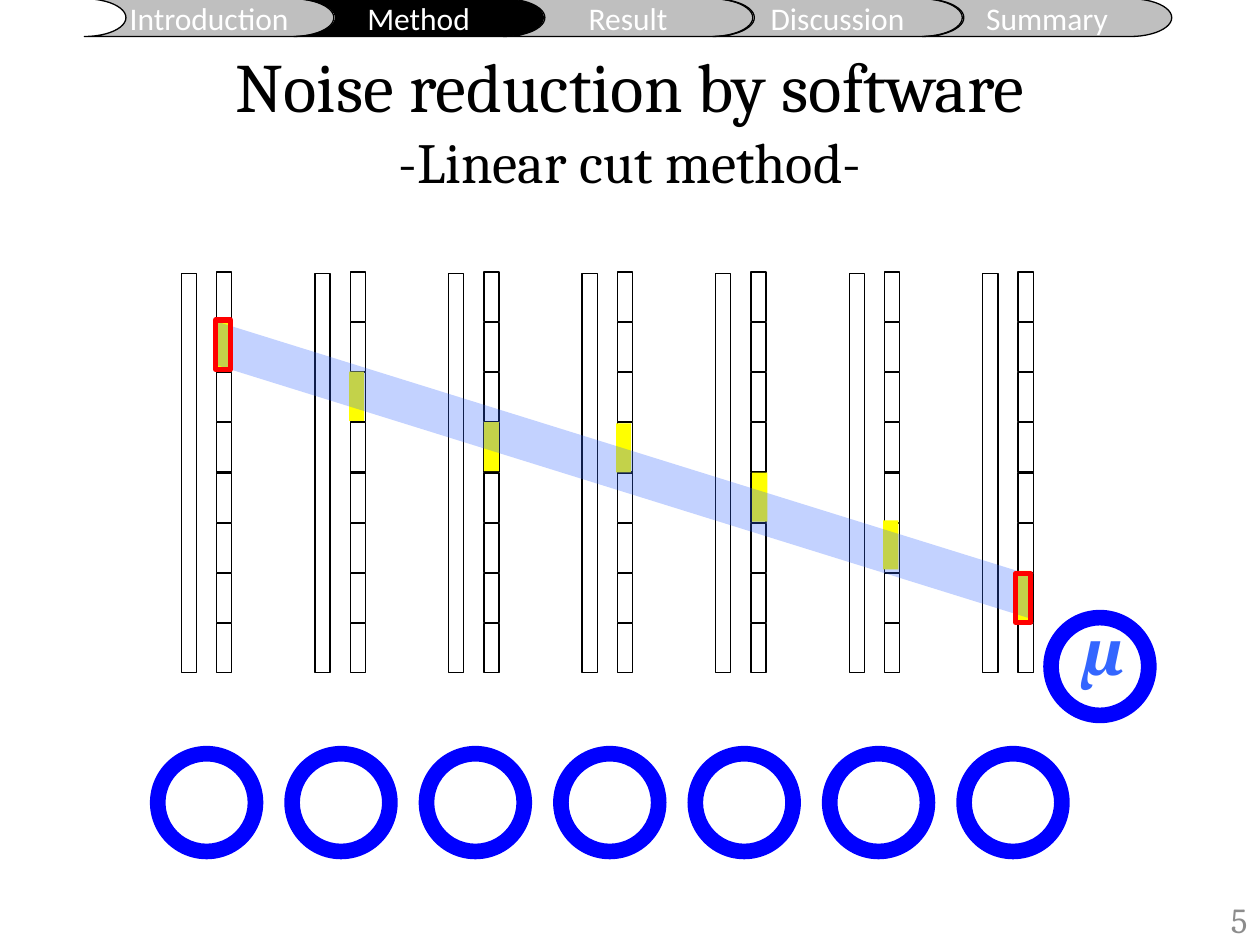
from dataclasses import dataclass
from typing import Optional

from lxml.etree import SubElement
from pptx import Presentation
from pptx.dml.color import RGBColor
from pptx.enum.shapes import MSO_SHAPE
from pptx.enum.text import MSO_ANCHOR, PP_ALIGN
from pptx.oxml.ns import qn
from pptx.util import Inches, Pt

BLACK = RGBColor(0x00, 0x00, 0x00)
WHITE = RGBColor(0xFF, 0xFF, 0xFF)
TAB_GRAY = RGBColor(0xBF, 0xBF, 0xBF)
NUMBER_GRAY = RGBColor(0x8C, 0x8C, 0x8C)
YELLOW = RGBColor(0xFF, 0xFF, 0x00)
RED = RGBColor(0xFF, 0x00, 0x00)
RING_BLUE = RGBColor(0x00, 0x00, 0xFF)
TRACK_BLUE = RGBColor(0x33, 0x66, 0xFF)

TABS = ["Introduction", "Method", "Result", "Discussion", "Summary"]
ACTIVE_TAB = "Method"
LAYER_COUNT = 7
CELL_COUNT = 8
LAYER_PITCH = 1.06
CELL_PITCH = 2.79 / 7
RING_PITCH = 6.4 / 6
CELL_WIDTH, CELL_HEIGHT = 0.12, 0.39
HITS = [(1.72, 2.54), (2.77, 2.95), (3.84, 3.35), (4.89, 3.36),
        (5.97, 3.75), (7.01, 4.13), (8.06, 4.53)]
END_MARKS = [(1.71, 2.54), (8.06, 4.55)]


@dataclass
class Area:
    left: float
    top: float
    width: float
    height: float

    def lengths(self) -> list:
        return [Inches(side) for side in (self.left, self.top, self.width, self.height)]


@dataclass
class Style:
    fill: Optional[RGBColor] = None
    line: Optional[RGBColor] = None
    line_width: float = 0.75
    adjust: Optional[float] = None


@dataclass
class Words:
    text: str
    size: float
    color: RGBColor
    font: str = "Cambria"
    bold: bool = False
    italic: bool = False


OUTLINE = Style(line=BLACK)
HIT = Style(fill=YELLOW)
END_MARK = Style(line=RED, line_width=3)
RING = Style(fill=RING_BLUE, adjust=0.138)
TRACK = Style(fill=TRACK_BLUE, adjust=0.854)


def add_figure(page, kind, area: Area, style: Style):
    figure = page.shapes.add_shape(kind, *area.lengths())
    figure.shadow.inherit = False
    if style.fill is None:
        figure.fill.background()
    else:
        figure.fill.solid()
        figure.fill.fore_color.rgb = style.fill
    if style.line is None:
        figure.line.fill.background()
    else:
        figure.line.color.rgb = style.line
        figure.line.width = Pt(style.line_width)
    if style.adjust is not None:
        figure.adjustments[0] = style.adjust
    return figure


def write_words(box, lines: list[Words], align, frame_format: dict) -> None:
    frame = box.text_frame
    for name, value in frame_format.items():
        setattr(frame, name, value)
    para = frame.paragraphs[0]
    para.alignment = align
    for index, words in enumerate(lines):
        if index:
            para.add_line_break()
        span = para.add_run()
        span.text = words.text
        font_format = {"name": words.font, "size": Pt(words.size),
                       "bold": words.bold, "italic": words.italic}
        for name, value in font_format.items():
            setattr(span.font, name, value)
        span.font.color.rgb = words.color


def add_words(page, area: Area, lines: list[Words], align, **frame_format) -> None:
    box = page.shapes.add_textbox(*area.lengths())
    write_words(box, lines, align, {"word_wrap": True, **frame_format})


def add_tabs(page) -> None:
    margins = {f"margin_{side}": 0 for side in ("left", "top", "right", "bottom")}
    for index, label in enumerate(TABS):
        fill = BLACK if label == ACTIVE_TAB else TAB_GRAY
        area = Area(0.67 + index * 6.65 / 4, -0.01, 1.98, 0.3)
        tab = add_figure(page, MSO_SHAPE.FLOWCHART_STORED_DATA, area,
                         Style(fill=fill, line=BLACK))
        tab.element.spPr.find(qn("a:xfrm")).set("flipH", "1")
        write_words(tab, [Words(label, 18, WHITE, "Calibri")], PP_ALIGN.CENTER,
                    {"vertical_anchor": MSO_ANCHOR.MIDDLE, **margins})


def add_layer(page, left: float) -> None:
    for row in range(CELL_COUNT):
        area = Area(left + 0.28, 2.16 + row * CELL_PITCH, CELL_WIDTH, CELL_HEIGHT)
        add_figure(page, MSO_SHAPE.RECTANGLE, area, OUTLINE)
    add_figure(page, MSO_SHAPE.RECTANGLE, Area(left, 2.17, CELL_WIDTH, 3.17), OUTLINE)


def add_cells(page, corners: list[tuple[float, float]], style: Style) -> None:
    for left, top in corners:
        add_figure(page, MSO_SHAPE.RECTANGLE,
                   Area(left, top, CELL_WIDTH, CELL_HEIGHT), style)


def add_ring(page, left: float, top: float) -> None:
    add_figure(page, MSO_SHAPE.DONUT, Area(left, top, 0.9, 0.9), RING)


def add_track(page) -> None:
    track = add_figure(page, MSO_SHAPE.PARALLELOGRAM, Area(3.76, 0.48, 2.37, 6.5), TRACK)
    track.rotation = 90
    color = track.element.spPr.find(qn("a:solidFill")).find(qn("a:srgbClr"))
    SubElement(color, qn("a:alpha")).set("val", "29000")


def main() -> None:
    deck = Presentation()
    deck.slide_width, deck.slide_height = Inches(10), Inches(7.5)
    page = deck.slides.add_slide(deck.slide_layouts[6])

    add_tabs(page)
    add_words(page, Area(0.5, 0.32, 9, 1.25),
              [Words("Noise reduction by software", 39.6, BLACK),
               Words("-Linear cut method-", 32.4, BLACK)],
              PP_ALIGN.CENTER, vertical_anchor=MSO_ANCHOR.MIDDLE)
    add_words(page, Area(7.67, 7.1, 2.33, 0.4), [Words("5", 20, NUMBER_GRAY)],
              PP_ALIGN.RIGHT, vertical_anchor=MSO_ANCHOR.MIDDLE)

    for index in range(LAYER_COUNT):
        add_layer(page, 1.44 + index * LAYER_PITCH)
    add_cells(page, HITS, HIT)
    add_words(page, Area(8.54, 4.81, 0.42, 0.71),
              [Words("μ", 36, TRACK_BLUE, bold=True, italic=True)], PP_ALIGN.LEFT,
              word_wrap=False, margin_left=Inches(0.04), margin_right=Inches(0.04))
    for index in range(LAYER_COUNT):
        add_ring(page, 1.19 + index * RING_PITCH, 5.92)
    add_track(page)
    add_ring(page, 8.28, 4.84)
    add_cells(page, END_MARKS, END_MARK)

    deck.save("out.pptx")


if __name__ == "__main__":
    main()
